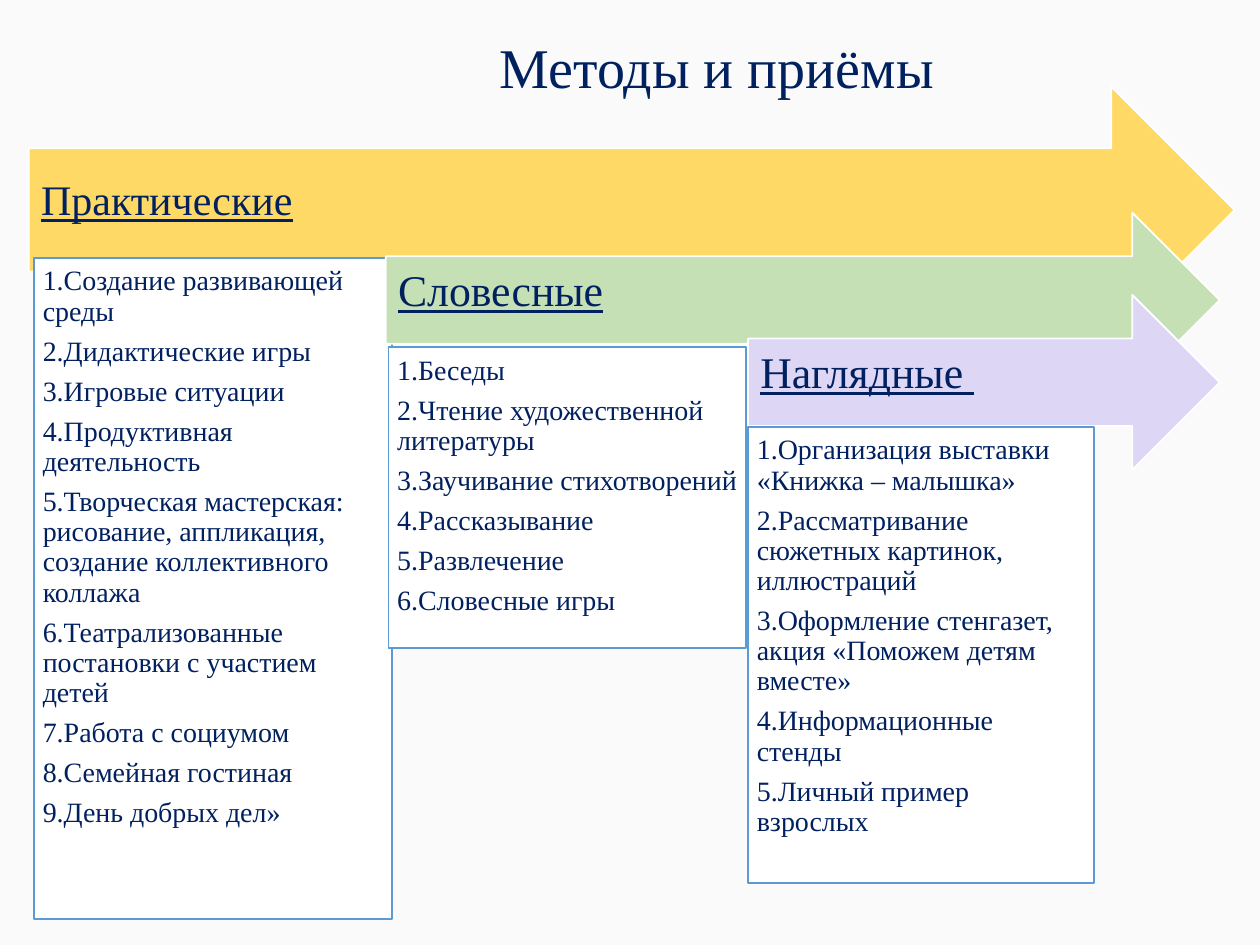
from pptx import Presentation
from pptx.dml.color import RGBColor
from pptx.enum.shapes import MSO_SHAPE as Preset
from pptx.enum.text import MSO_ANCHOR as Anchor, PP_ALIGN as Align
from pptx.util import Pt

FONT = "Times New Roman"
COLORS = {
    "background": "FAFAFA",
    "text": "002060",
    "white": "FFFFFF",
    "border": "5B9BD5",
    "yellow": "FFD966",
    "green": "C5E0B4",
    "lilac": "DDD7F5",
}
TITLE = "Методы и приёмы"
METHODS = [
    {
        "heading": "Практические", "size": 24, "color": "yellow",
        "arrow": (16.5, 49.5, 689, 141), "panel": (19.5, 147.5, 204.5, 377.5),
        "items": [
            "1.Создание развивающей среды",
            "2.Дидактические игры",
            "3.Игровые ситуации",
            "4.Продуктивная деятельность",
            "5.Творческая мастерская: рисование, аппликация, создание коллективного коллажа",
            "6.Театрализованные постановки с участием детей",
            "7.Работа с социумом",
            "8.Семейная гостиная",
            "9.День добрых дел»",
        ],
    },
    {
        "heading": "Словесные", "size": 25, "color": "green",
        "arrow": (220.5, 121.5, 476.5, 100), "panel": (222, 198.5, 204.5, 172),
        "items": [
            "1.Беседы",
            "2.Чтение художественной литературы",
            "3.Заучивание стихотворений",
            "4.Рассказывание",
            "5.Развлечение",
            "6.Словесные игры",
        ],
    },
    {
        "heading": "Наглядные ", "size": 25, "color": "lilac",
        "arrow": (427.5, 168.5, 269.5, 100), "panel": (427.5, 244, 197.5, 260.5),
        "items": [
            "1.Организация выставки «Книжка – малышка»",
            "2.Рассматривание сюжетных картинок, иллюстраций",
            "3.Оформление стенгазет, акция «Поможем детям вместе»",
            "4.Информационные стенды",
            "5.Личный пример взрослых",
        ],
    },
]


def rgb(name):
    return RGBColor.from_string(COLORS[name])


def write(frame, lines, size, anchor, insets, align=Align.LEFT, underline=None, gap=0):
    frame.word_wrap = True
    frame.vertical_anchor = anchor
    (frame.margin_left, frame.margin_top,
     frame.margin_right, frame.margin_bottom) = map(Pt, insets)
    for index, line in enumerate(lines):
        paragraph = frame.add_paragraph() if index else frame.paragraphs[0]
        paragraph.alignment = align
        paragraph.line_spacing = 0.9
        paragraph.space_after = Pt(gap)
        run = paragraph.add_run()
        run.text = line
        run.font.name = FONT
        run.font.size = Pt(size)
        run.font.underline = underline
        run.font.color.rgb = rgb("text")


def add_block(slide, preset, place, fill, line):
    block = slide.shapes.add_shape(preset, *map(Pt, place))
    block.shadow.inherit = False
    block.fill.solid()
    block.fill.fore_color.rgb = rgb(fill)
    block.line.color.rgb = rgb(line)
    block.line.width = Pt(1)
    return block.text_frame


def main():
    deck = Presentation()
    deck.slide_width, deck.slide_height = Pt(720), Pt(540)
    slide = deck.slides.add_slide(deck.slide_layouts[5])
    slide.background.fill.solid()
    slide.background.fill.fore_color.rgb = rgb("background")

    title = slide.shapes.title
    title.left, title.top, title.width, title.height = map(Pt, (99.5, 17.5, 620.5, 46))
    write(title.text_frame, [TITLE], 32, Anchor.MIDDLE, (7.2, 3.6, 7.2, 3.6), Align.CENTER)

    for method in METHODS:
        arrow = add_block(slide, Preset.RIGHT_ARROW, method["arrow"], method["color"], "white")
        write(arrow, [method["heading"]], method["size"], Anchor.MIDDLE,
              (7, 7, 20, 16), underline=True)
        panel = add_block(slide, Preset.RECTANGLE, method["panel"], "white", "border")
        write(panel, method["items"], 16, Anchor.TOP, (5, 5, 5, 5), gap=5.6)

    deck.save("out.pptx")


if __name__ == "__main__":
    main()
